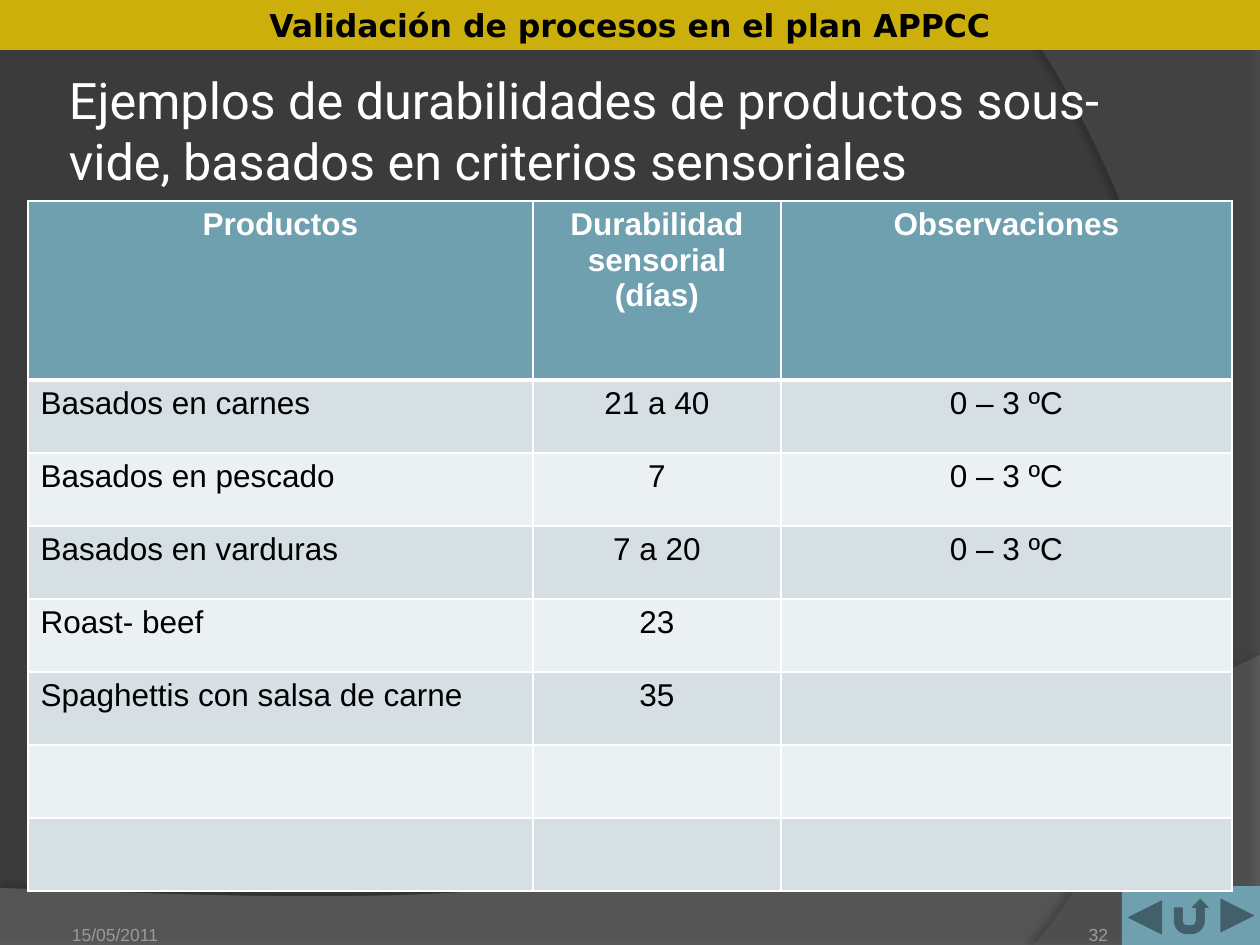
import pptx
import pptx.util
import pptx.dml.color
import pptx.enum.shapes
import pptx.enum.text
import pptx.oxml
import pptx.oxml.ns

RGB = pptx.dml.color.RGBColor
MSO_SHAPE = pptx.enum.shapes.MSO_SHAPE
ALIGN = pptx.enum.text.PP_ALIGN
ANCHOR = pptx.enum.text.MSO_ANCHOR
NS = pptx.oxml.ns.nsdecls("a")

BACKGROUND = RGB(0x3B, 0x3B, 0x3B)
LOWER_WAVE = RGB(0x7F, 0x7F, 0x7F)
RIGHT_WAVE = RGB(0x5E, 0x5E, 0x5E)
GOLD = RGB(0xCC, 0xAF, 0x0A)
TEAL = RGB(0x6E, 0xA0, 0xB0)
BAND_DARK = RGB(0xD5, 0xDF, 0xE4)
BAND_LIGHT = RGB(0xEB, 0xF0, 0xF2)
FOOTER_GREY = RGB(0x9D, 0x9B, 0x9A)
WHITE = RGB(0xFF, 0xFF, 0xFF)
BLACK = RGB(0, 0, 0)

PX_PER_INCH = 126


def emu(px):
    return round(px * 914400 / PX_PER_INCH)


def write_text(frame, text, *, size=18, font="Arial", color=BLACK, bold=False, align=ALIGN.LEFT):
    paragraph = frame.paragraphs[0]
    paragraph.alignment = align
    run = paragraph.add_run()
    run.text = text
    run.font.size = pptx.util.Pt(size)
    run.font.name = font
    run.font.bold = bold
    run.font.color.rgb = color


def bezier(start, control1, control2, end, steps=48):
    """Points along a cubic curve, without its start."""
    points = []
    for step in range(1, steps + 1):
        t = step / steps
        weights = ((1 - t) ** 3, 3 * t * (1 - t) ** 2, 3 * t * t * (1 - t), t ** 3)
        points.append(tuple(
            sum(w * p[axis] for w, p in zip(weights, (start, control1, control2, end)))
            for axis in (0, 1)))
    return points


class SlideBuilder:
    def __init__(self, slide):
        self.slide = slide
        slide.background.fill.solid()
        slide.background.fill.fore_color.rgb = BACKGROUND

    def paint(self, shape, color):
        shape.shadow.inherit = False
        shape.fill.solid()
        shape.fill.fore_color.rgb = color
        shape.line.fill.background()

    def wave(self, points, color, alpha, shadow_alpha, distance, direction):
        outline = self.slide.shapes.build_freeform(
            emu(points[0][0]), emu(points[0][1]), scale=1.0)
        outline.add_line_segments([(emu(x), emu(y)) for x, y in points[1:]], close=True)
        shape = outline.convert_to_shape()
        self.paint(shape, color)
        properties = shape._element.spPr
        tint = properties.find(".//" + pptx.oxml.ns.qn("a:srgbClr"))
        tint.append(pptx.oxml.parse_xml(f'<a:alpha {NS} val="{alpha * 1000}"/>'))
        effects = properties.find(pptx.oxml.ns.qn("a:effectLst"))
        effects.append(pptx.oxml.parse_xml(
            f'<a:outerShdw {NS} blurRad="50800" dist="{pptx.util.Pt(distance)}" '
            f'dir="{direction * 60000}" algn="ctr" rotWithShape="0"><a:srgbClr val="000000">'
            f'<a:alpha val="{shadow_alpha * 1000}"/></a:srgbClr></a:outerShdw>'))

    def shape(self, kind, left, top, width, height, color):
        shape = self.slide.shapes.add_shape(kind, emu(left), emu(top), emu(width), emu(height))
        self.paint(shape, color)
        return shape

    def text(self, text, left, top, width, height, *, anchor, insets, **style):
        box = self.slide.shapes.add_textbox(emu(left), emu(top), emu(width), emu(height))
        frame = box.text_frame
        frame.word_wrap = True
        frame.vertical_anchor = anchor
        (frame.margin_left, frame.margin_top,
         frame.margin_right, frame.margin_bottom) = map(emu, insets)
        write_text(frame, text, **style)

    def cell(self, cell, text, fill, thick_sides="", **style):
        properties = cell._tc.get_or_add_tcPr()
        for side in "LRTB":
            width = pptx.util.Pt(3 if side in thick_sides else 1)
            properties.append(pptx.oxml.parse_xml(
                f'<a:ln{side} {NS} w="{width}"><a:solidFill>'
                f'<a:srgbClr val="{WHITE}"/></a:solidFill></a:ln{side}>'))
        cell.fill.solid()
        cell.fill.fore_color.rgb = fill
        if text:
            write_text(cell.text_frame, text, **style)

    def table(self, left, top, widths, heights, rows):
        table = self.slide.shapes.add_table(
            len(heights), len(widths), emu(left), emu(top),
            emu(sum(widths)), emu(sum(heights))).table
        for column, width in zip(table.columns, widths):
            column.width = emu(width)
        for r, (height, values) in enumerate(zip(heights, rows)):
            table.rows[r].height = emu(height)
            for c, value in enumerate(values):
                if r == 0:
                    self.cell(table.cell(r, c), value, TEAL, "B",
                              color=WHITE, bold=True, align=ALIGN.CENTER)
                else:
                    self.cell(table.cell(r, c), value,
                              BAND_DARK if r % 2 else BAND_LIGHT, "T" if r == 1 else "",
                              align=ALIGN.CENTER if c else ALIGN.LEFT)


def main():
    deck = pptx.Presentation()
    deck.slide_width, deck.slide_height = emu(1260), emu(945)
    builder = SlideBuilder(deck.slides.add_slide(deck.slide_layouts[6]))

    # Background waves
    builder.wave([(0, 888), (0, 946), (1260, 946), (1260, 655)]
                 + bezier((1260, 655), (704, 919), (493, 906), (0, 888)),
                 LOWER_WAVE, 45, 35, 3.5, 270)
    builder.wave([(1260, 3), (1260, 945), (1034, 945)]
                 + bezier((1034, 945), (1178, 780), (1283, 378), (1008, 0)),
                 RIGHT_WAVE, 40, 45, 4, 180)

    # Course banner
    banner = builder.shape(MSO_SHAPE.RECTANGLE, 0, 0, 1260, 50, GOLD)
    banner.text_frame.vertical_anchor = ANCHOR.MIDDLE
    write_text(banner.text_frame, "Validación de procesos en el plan APPCC",
               font="DejaVu Sans", bold=True, align=ALIGN.CENTER)

    # Navigation buttons, all resting on the bottom edge
    for kind, left, top, width in (
            (MSO_SHAPE.ACTION_BUTTON_BACK_OR_PREVIOUS, 1122, 890, 46),
            (MSO_SHAPE.ACTION_BUTTON_RETURN, 1168, 888, 47),
            (MSO_SHAPE.ACTION_BUTTON_FORWARD_OR_NEXT, 1215, 886, 45)):
        builder.shape(kind, left, top, width, 945 - top, TEAL)

    # Title and footer
    builder.text("Ejemplos de durabilidades de productos sous-vide, basados en criterios sensoriales",
                 63, 91, 1134, 78, anchor=ANCHOR.MIDDLE, insets=(6, 6, 6, 6),
                 size=28.8, font="Roboto", color=WHITE)
    builder.text("15/05/2011", 59, 895, 294, 50, anchor=ANCHOR.BOTTOM,
                 insets=(13, 6, 13, 0), size=10, color=FOOTER_GREY)
    builder.text("32", 1003, 895, 105, 50, anchor=ANCHOR.BOTTOM,
                 insets=(0, 0, 0, 0), size=10, color=FOOTER_GREY, align=ALIGN.RIGHT)

    # Shelf-life table
    builder.table(28, 201, [505, 248, 451], [179] + [73] * 7, [
        ("Productos", "Durabilidad sensorial (días)", "Observaciones"),
        ("Basados en carnes", "21 a 40", "0 – 3 ºC"),
        ("Basados en pescado", "7", "0 – 3 ºC"),
        ("Basados en varduras", "7 a 20", "0 – 3 ºC"),
        ("Roast- beef", "23", ""),
        ("Spaghettis con salsa de carne", "35", ""),
        ("", "", ""),
        ("", "", ""),
    ])

    deck.save("out.pptx")


if __name__ == "__main__":
    main()
